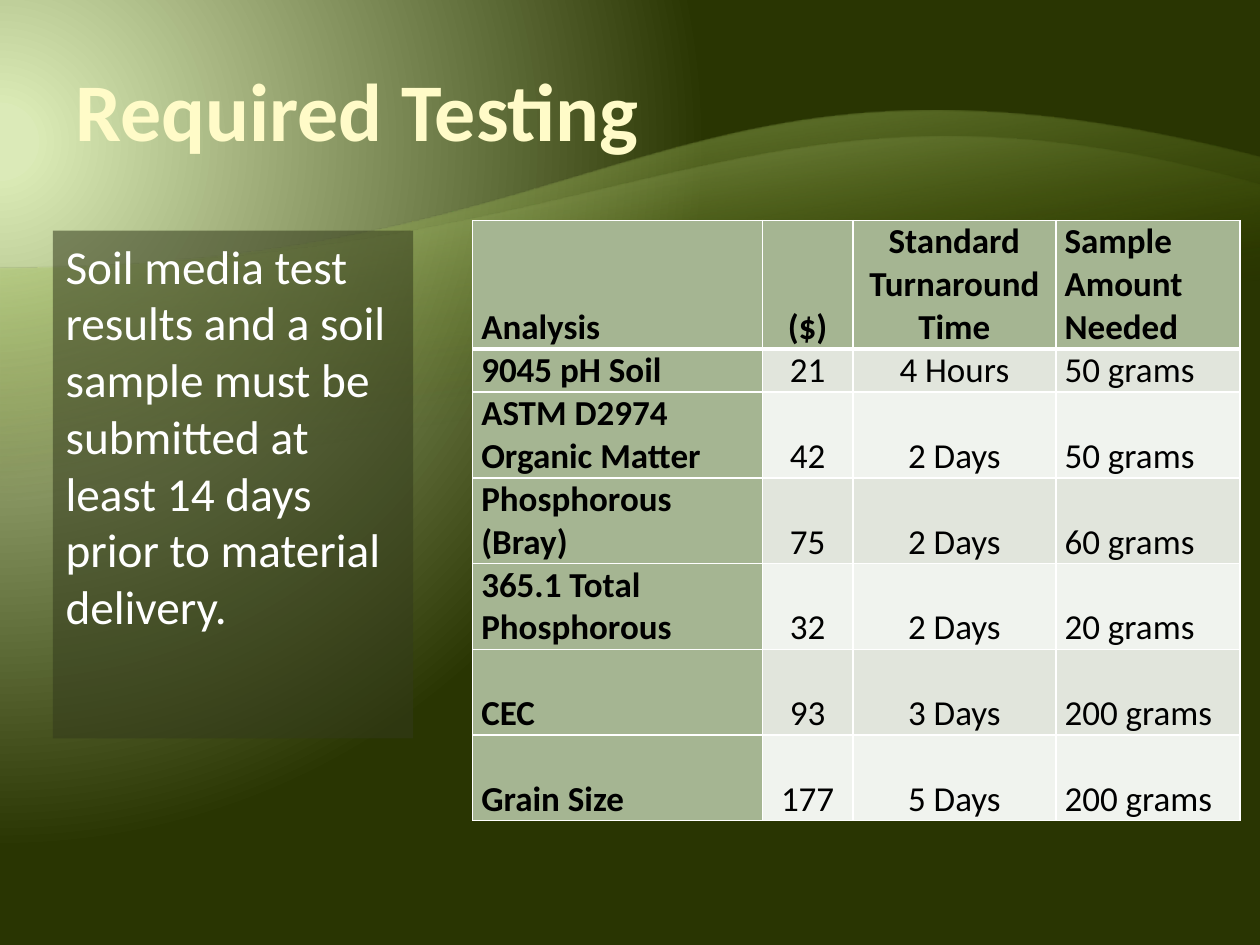
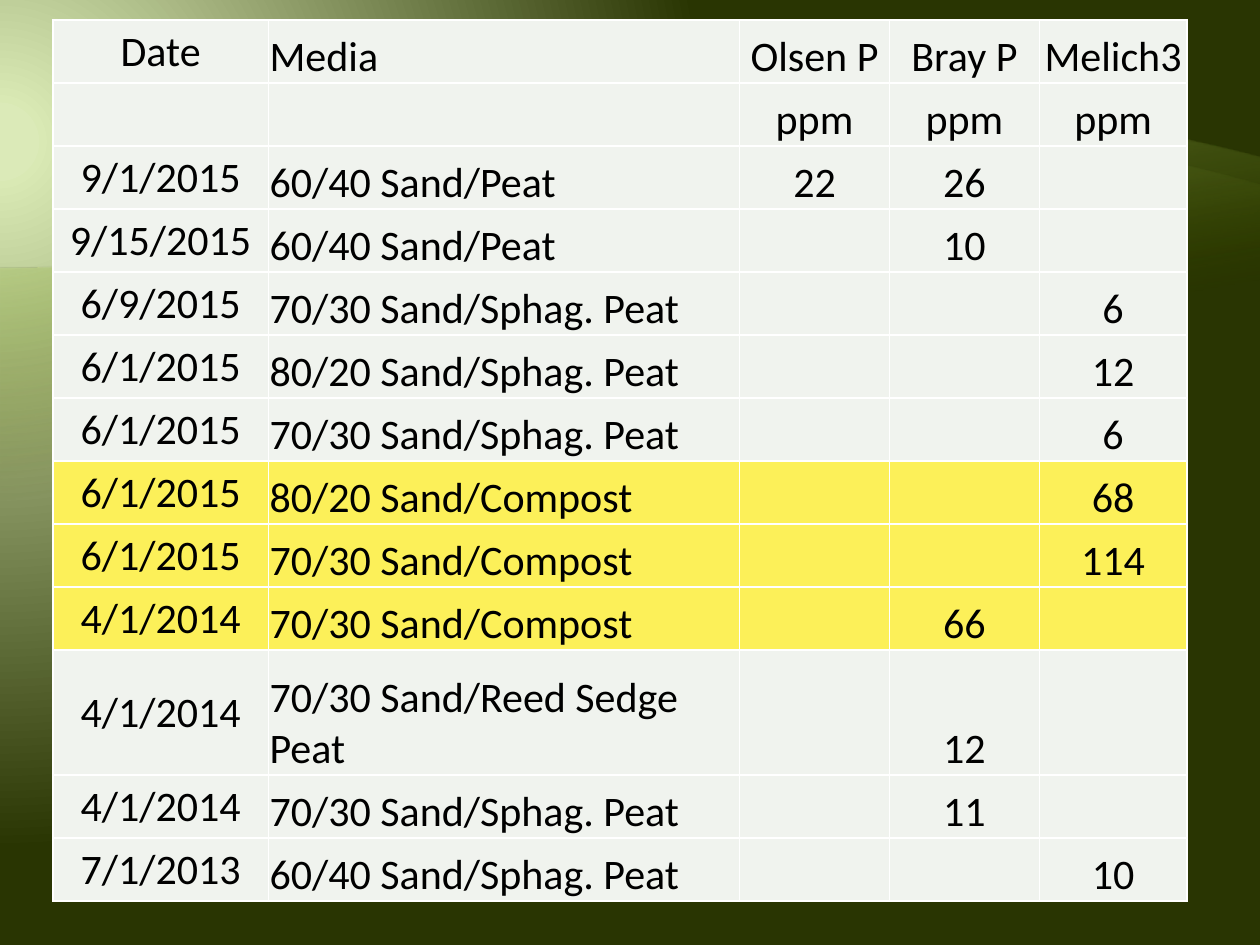
"""Build two slides on soil media testing: required tests and phosphorus results."""
from dataclasses import dataclass
from typing import Callable

from lxml import etree
from pptx import Presentation
from pptx.dml.color import RGBColor
from pptx.enum.text import MSO_ANCHOR, MSO_AUTO_SIZE, PP_ALIGN
from pptx.oxml import parse_xml
from pptx.oxml.ns import nsdecls, qn
from pptx.util import Inches, Pt

LEFT, CENTER = PP_ALIGN.LEFT, PP_ALIGN.CENTER
TOP, MIDDLE, BOTTOM = MSO_ANCHOR.TOP, MSO_ANCHOR.MIDDLE, MSO_ANCHOR.BOTTOM
NO_AUTOFIT = MSO_AUTO_SIZE.NONE


@dataclass(frozen=True)
class Theme:
    font: str = "Calibri"
    title: str = "FFFBC8"
    light: str = "FFFFFF"
    ink: str = "000000"
    panel: str = "333A1C"
    panel_opacity: int = 54
    accent: str = "A5B592"
    band_dark: str = "E1E5DC"
    band_light: str = "F0F3EE"
    highlight: str = "FCF059"
    wave_base: str = "587300"
    title_size: float = 46.8
    body_size: float = 27
    tests_size: float = 20
    results_size: float = 24
    border: float = 1
    header_border: float = 3


THEME = Theme()


@dataclass(frozen=True)
class Stop:
    position: int
    color: str
    opacity: int = 100


@dataclass(frozen=True)
class Wave:
    left_y: float
    control: tuple[float, float]
    right_y: float
    bottom: float
    crest: Stop


@dataclass(frozen=True)
class Grid:
    left: float
    top: float
    widths: list[float]
    heights: list[float]
    aligns: list[PP_ALIGN]
    anchors: list[MSO_ANCHOR]
    insets: tuple[float, float, float, float]
    size: float
    rows: list[tuple[str, ...]]
    fill_for: Callable[[int, int], str]
    header_rule: bool = False


BACKGROUND_STOPS = [Stop(5, "DBEAB8"), Stop(5, "D9E9B4"), Stop(90, "293502")]
CIRCLE = '<a:path path="circle"><a:fillToRect l="20000" t="30000" r="135000" b="100000"/></a:path>'
UPWARD = f'<a:lin ang="{260 * 60000}" scaled="0"/>'
WAVES = [
    Wave(2.13, (5.34, 0.05), 1.25, 7.33, Stop(100, "C8E38D", 55)),
    Wave(2.13, (5.98, 0.31), 1.47, 6.37, Stop(100, "D9EBB2", 30)),
]

TESTS = [
    ("Analysis", "($)", "Standard Turnaround Time", "Sample Amount Needed"),
    ("9045 pH Soil", "21", "4 Hours", "50 grams"),
    ("ASTM D2974 Organic Matter", "42", "2 Days", "50 grams"),
    ("Phosphorous (Bray)", "75", "2 Days", "60 grams"),
    ("365.1 Total Phosphorous", "32", "2 Days", "20 grams"),
    ("CEC", "93", "3 Days", "200 grams"),
    ("Grain Size", "177", "5 Days", "200 grams"),
]
RESULTS = [
    ("Date", "Media", "Olsen P", "Bray P", "Melich3"),
    ("", "", "ppm", "ppm", "ppm"),
    ("9/1/2015", "60/40 Sand/Peat", "22", "26", ""),
    ("9/15/2015", "60/40 Sand/Peat", "", "10", ""),
    ("6/9/2015", "70/30 Sand/Sphag. Peat", "", "", "6"),
    ("6/1/2015", "80/20 Sand/Sphag. Peat", "", "", "12"),
    ("6/1/2015", "70/30 Sand/Sphag. Peat", "", "", "6"),
    ("6/1/2015", "80/20 Sand/Compost", "", "", "68"),
    ("6/1/2015", "70/30 Sand/Compost", "", "", "114"),
    ("4/1/2014", "70/30 Sand/Compost", "", "66", ""),
    ("4/1/2014", "70/30 Sand/Reed Sedge Peat", "", "12", ""),
    ("4/1/2014", "70/30 Sand/Sphag. Peat", "", "11", ""),
    ("7/1/2013", "60/40 Sand/Sphag. Peat", "", "", "10"),
]


def tests_fill(row: int, column: int) -> str:
    if row == 0 or column == 0:
        return THEME.accent
    return THEME.band_dark if row % 2 else THEME.band_light


def results_fill(row: int, column: int) -> str:
    return THEME.highlight if "Compost" in RESULTS[row][1] else THEME.band_light


TESTS_GRID = Grid(
    3.75, 1.75, [2.3, 0.72, 1.61, 1.46], [1.02, 0.34] + [0.68] * 5,
    [LEFT, CENTER, CENTER, LEFT], [BOTTOM] * 4, (0.07, 0, 0.07, 0),
    THEME.tests_size, TESTS, tests_fill, header_rule=True,
)
RESULTS_GRID = Grid(
    0.42, 0.16, [1.71, 3.74, 1.19, 1.19, 1.17], [0.5] * 10 + [0.99] + [0.5] * 2,
    [CENTER, LEFT] + [CENTER] * 3, [MIDDLE] + [BOTTOM] * 4, (0.01, 0.01, 0.01, 0),
    THEME.results_size, RESULTS, results_fill,
)


def gradient(stops: list[Stop], direction: str) -> etree.ElementBase:
    stops_xml = "".join(
        f'<a:gs pos="{stop.position * 1000}"><a:srgbClr val="{stop.color}">'
        f'<a:alpha val="{stop.opacity * 1000}"/></a:srgbClr></a:gs>'
        for stop in stops
    )
    return parse_xml(
        f'<a:gradFill {nsdecls("a")} rotWithShape="1">'
        f"<a:gsLst>{stops_xml}</a:gsLst>{direction}</a:gradFill>"
    )


def swap(old: etree.ElementBase, new: etree.ElementBase) -> None:
    old.getparent().replace(old, new)


def add_run(paragraph, text: str, size: float, color: str, bold: bool = False) -> None:
    run = paragraph.add_run()
    run.text = text
    run.font.name = THEME.font
    run.font.size = Pt(size)
    run.font.bold = bold
    run.font.color.rgb = RGBColor.from_string(color)


def place(shape, left: float, top: float, width: float, height: float) -> None:
    shape.left, shape.top = Inches(left), Inches(top)
    shape.width, shape.height = Inches(width), Inches(height)


def start_text(shape):
    frame = shape.text_frame
    frame.word_wrap = True
    frame.auto_size = NO_AUTOFIT
    frame.vertical_anchor = TOP
    paragraph = frame.paragraphs[0]
    paragraph.alignment = LEFT
    paragraph.space_before = Pt(0)
    return paragraph


def paint_background(master) -> None:
    master.background.fill.solid()
    solid = master.element.find(".//" + qn("p:bgPr") + "/" + qn("a:solidFill"))
    swap(solid, gradient(BACKGROUND_STOPS, CIRCLE))


def draw_wave(slide, wave: Wave):
    builder = slide.shapes.build_freeform(0, Inches(wave.left_y))
    corners = [(10, wave.right_y), (10, wave.bottom), (0, wave.bottom)]
    builder.add_line_segments([(Inches(x), Inches(y)) for x, y in corners])
    shape = builder.convert_to_shape()
    shape.shadow.inherit = False
    shape.line.fill.background()
    shape.fill.solid()
    swap(
        shape.element.find(".//" + qn("a:solidFill")),
        gradient([Stop(65, THEME.wave_base, 0), wave.crest], UPWARD),
    )
    controls = [(5, wave.left_y), wave.control, (10, wave.right_y)]
    points = "".join(
        f'<a:pt x="{Inches(x)}" y="{Inches(y - wave.right_y)}"/>' for x, y in controls
    )
    curve = parse_xml(f'<a:cubicBezTo {nsdecls("a")}>{points}</a:cubicBezTo>')
    swap(shape.element.find(".//" + qn("a:lnTo")), curve)
    return shape


def add_waves_to_master(master, slide) -> None:
    for depth, wave in enumerate(WAVES, start=2):
        master.shapes.element.insert(depth, draw_wave(slide, wave).element)


def set_borders(cell, top: float, bottom: float) -> None:
    widths = {"lnL": THEME.border, "lnR": THEME.border, "lnT": top, "lnB": bottom}
    properties = cell._tc.get_or_add_tcPr()
    for edge, width in widths.items():
        properties.append(parse_xml(
            f'<a:{edge} {nsdecls("a")} w="{Pt(width)}"><a:solidFill>'
            f'<a:srgbClr val="{THEME.light}"/></a:solidFill></a:{edge}>'
        ))


def fill_cell(cell, grid: Grid, row: int, column: int) -> None:
    ruled = THEME.header_border if grid.header_rule else THEME.border
    set_borders(
        cell,
        top=ruled if row == 1 else THEME.border,
        bottom=ruled if row == 0 else THEME.border,
    )
    color = grid.fill_for(row, column)
    cell.fill.solid()
    cell.fill.fore_color.rgb = RGBColor.from_string(color)
    cell.vertical_anchor = grid.anchors[column]
    cell.margin_left, cell.margin_top, cell.margin_right, cell.margin_bottom = map(
        Inches, grid.insets
    )
    text = grid.rows[row][column]
    if text:
        paragraph = cell.text_frame.paragraphs[0]
        paragraph.alignment = grid.aligns[column]
        add_run(paragraph, text, grid.size, THEME.ink, bold=color == THEME.accent)


def draw_grid(slide, grid: Grid) -> None:
    table = slide.shapes.add_table(
        len(grid.heights), len(grid.widths), Inches(grid.left), Inches(grid.top),
        Inches(sum(grid.widths)), Inches(sum(grid.heights)),
    ).table
    table.first_row = table.horz_banding = False
    for column, width in zip(table.columns, grid.widths):
        column.width = Inches(width)
    for row, height in zip(table.rows, grid.heights):
        row.height = Inches(height)
    for row in range(len(grid.heights)):
        for column in range(len(grid.widths)):
            fill_cell(table.cell(row, column), grid, row, column)


def fill_requirement(panel) -> None:
    place(panel, 0.42, 1.83, 2.86, 4.03)
    panel.fill.solid()
    panel.fill.fore_color.rgb = RGBColor.from_string(THEME.panel)
    tint = panel.element.spPr.find(".//" + qn("a:srgbClr"))
    etree.SubElement(tint, qn("a:alpha")).set("val", str(THEME.panel_opacity * 1000))
    requirement = start_text(panel)
    properties = requirement._p.get_or_add_pPr()
    properties.set("marL", "0")
    properties.set("indent", "0")
    etree.SubElement(properties, qn("a:buNone"))
    add_run(
        requirement,
        "Soil media test results and a soil sample must be submitted at least "
        "14 days prior to material delivery.",
        THEME.body_size, THEME.light,
    )


def main() -> None:
    deck = Presentation()
    deck.slide_width, deck.slide_height = Inches(10), Inches(7.5)
    master = deck.slide_master
    paint_background(master)

    testing = deck.slides.add_slide(deck.slide_layouts[1])
    add_waves_to_master(master, testing)
    place(testing.shapes.title, 0.5, 0.42, 9, 1.5)
    heading = start_text(testing.shapes.title)
    add_run(heading, "Required Testing", THEME.title_size, THEME.title, bold=True)
    fill_requirement(testing.placeholders[1])
    draw_grid(testing, TESTS_GRID)

    results = deck.slides.add_slide(deck.slide_layouts[6])
    draw_grid(results, RESULTS_GRID)
    deck.save("out.pptx")


if __name__ == "__main__":
    main()
